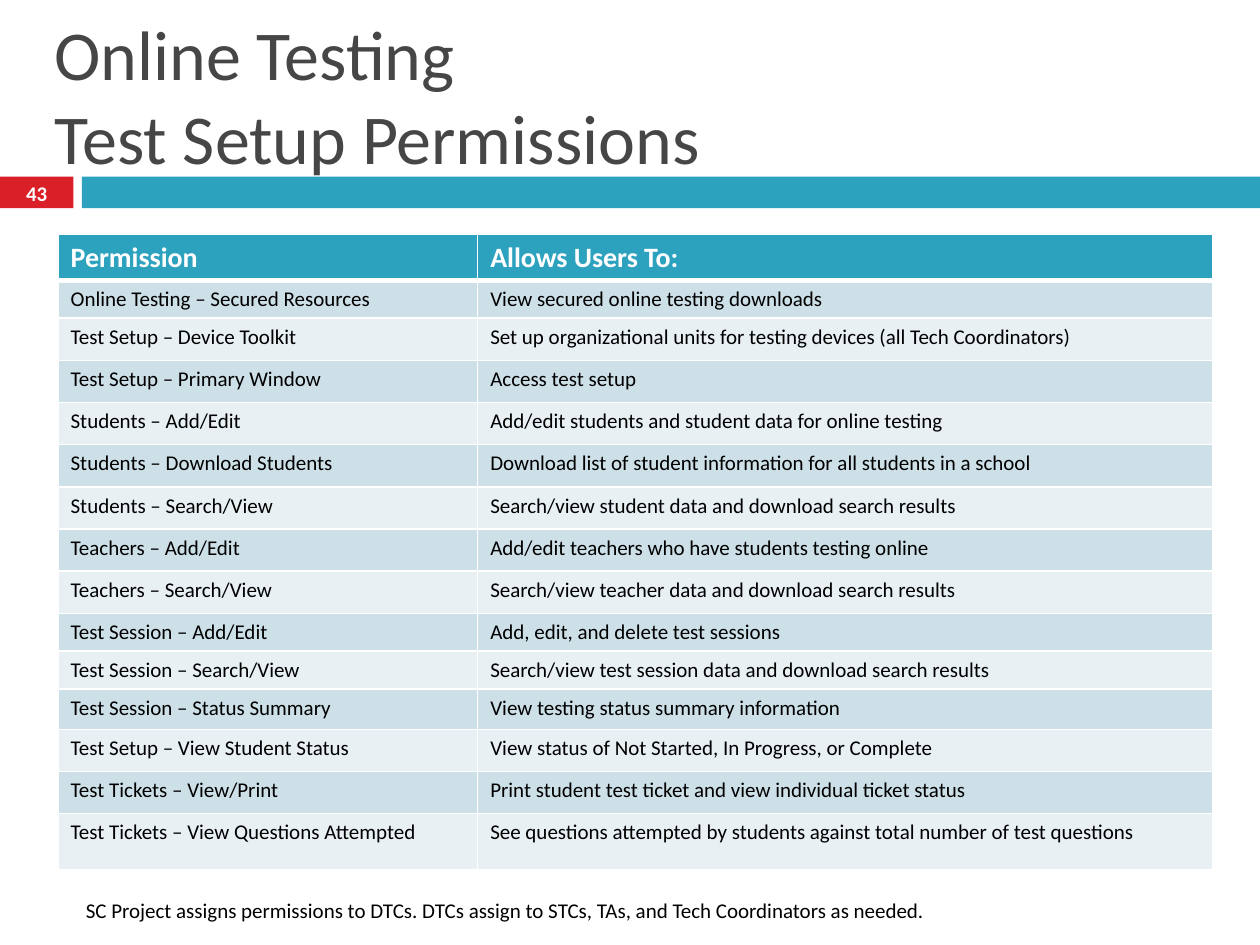
from lxml import etree
from pptx import Presentation
from pptx.dml.color import RGBColor
from pptx.enum import shapes, text
from pptx.oxml import ns
from pptx.util import Cm, Pt

WHITE = RGBColor(0xFF, 0xFF, 0xFF)
BLACK = RGBColor(0, 0, 0)
GRAY = RGBColor(0x46, 0x46, 0x46)
RED = RGBColor(0xDA, 0x1F, 0x28)
TEAL = RGBColor(0x2D, 0xA2, 0xBF)
BANDS = [RGBColor(0xE8, 0xF0, 0xF4), RGBColor(0xCD, 0xE0, 0xE8)]

ROWS = [
    (0.71, "Permission", "Allows Users To:"),
    (0.76, "Online Testing – Secured Resources", "View secured online testing downloads"),
    (0.85, "Test Setup – Device Toolkit", "Set up organizational units for testing devices (all Tech Coordinators)"),
    (0.85, "Test Setup – Primary Window", "Access test setup"),
    (0.85, "Students – Add/Edit", "Add/edit students and student data for online testing"),
    (0.85, "Students – Download Students", "Download list of student information for all students in a school"),
    (0.85, "Students – Search/View", "Search/view student data and download search results"),
    (0.85, "Teachers – Add/Edit", "Add/edit teachers who have students testing online"),
    (0.85, "Teachers – Search/View", "Search/view teacher data and download search results"),
    (0.64, "Test Session – Add/Edit", "Add, edit, and delete test sessions"),
    (0.71, "Test Session – Search/View", "Search/view test session data and download search results"),
    (0.81, "Test Session – Status Summary", "View testing status summary information"),
    (0.85, "Test Setup – View Student Status", "View status of Not Started, In Progress, or Complete"),
    (0.85, "Test Tickets – View/Print", "Print student test ticket and view individual ticket status"),
    (1.14, "Test Tickets – View Questions Attempted",
     "See questions attempted by students against total number of test questions"),
]


def write(frame, words, size, color, bold=False):
    frame.text = words
    frame.word_wrap = True
    for par in frame.paragraphs:
        for run in par.runs:
            run.font.name = "Calibri"
            run.font.size = Pt(size)
            run.font.bold = bold
            run.font.color.rgb = color


def edge(cell, side, width):
    line = etree.SubElement(cell._tc.get_or_add_tcPr(), ns.qn("a:ln" + side), w=str(Pt(width)))
    fill = etree.SubElement(line, ns.qn("a:solidFill"))
    etree.SubElement(fill, ns.qn("a:srgbClr"), val=str(WHITE))


deck = Presentation()
deck.slide_width, deck.slide_height = Cm(25.4), Cm(19.05)
slide = deck.slides.add_slide(deck.slide_layouts[6])

for left, width, color in [(0, 1.48, RED), (1.65, 23.75, TEAL)]:
    bar = slide.shapes.add_shape(shapes.MSO_SHAPE.RECTANGLE, Cm(left), Cm(3.56), Cm(width), Cm(0.64))
    bar.shadow.inherit = False
    bar.fill.solid()
    bar.fill.fore_color.rgb = color
    bar.line.fill.background()

title = slide.shapes.add_textbox(Cm(0.85), Cm(0.85), Cm(23.7), Cm(2.12)).text_frame
write(title, "Online Testing\vTest Setup Permissions", 40, GRAY)
title.vertical_anchor = text.MSO_ANCHOR.MIDDLE

page = slide.shapes.add_textbox(0, Cm(3.54), Cm(1.48), Cm(0.69)).text_frame
write(page, "43", 11.9, WHITE, True)
page.margin_top = page.margin_bottom = 0
page.vertical_anchor = text.MSO_ANCHOR.MIDDLE
page.paragraphs[0].alignment = text.PP_ALIGN.CENTER

high = sum(row[0] for row in ROWS)
table = slide.shapes.add_table(len(ROWS), 2, Cm(1.17), Cm(4.72), Cm(23.28), Cm(high)).table
table.columns[0].width, table.columns[1].width = Cm(8.46), Cm(14.82)
for i, (tall, *words) in enumerate(ROWS):
    table.rows[i].height = Cm(tall)
    head = i == 0
    for j, word in enumerate(words):
        cell = table.cell(i, j)
        write(cell.text_frame, word, 16 if head else 12, WHITE if head else BLACK, head)
        for side in "LRTB":
            thick = (i, side) in [(0, "B"), (1, "T")]
            edge(cell, side, 3 if thick else 1)
        cell.fill.solid()
        cell.fill.fore_color.rgb = TEAL if head else BANDS[i % 2]

note = slide.shapes.add_textbox(Cm(1.48), Cm(17.96), Cm(22.65), Cm(0.77)).text_frame
write(note, "SC Project assigns permissions to DTCs. DTCs assign to STCs, TAs, and Tech Coordinators as needed.",
      12, BLACK)

deck.save("out.pptx")
